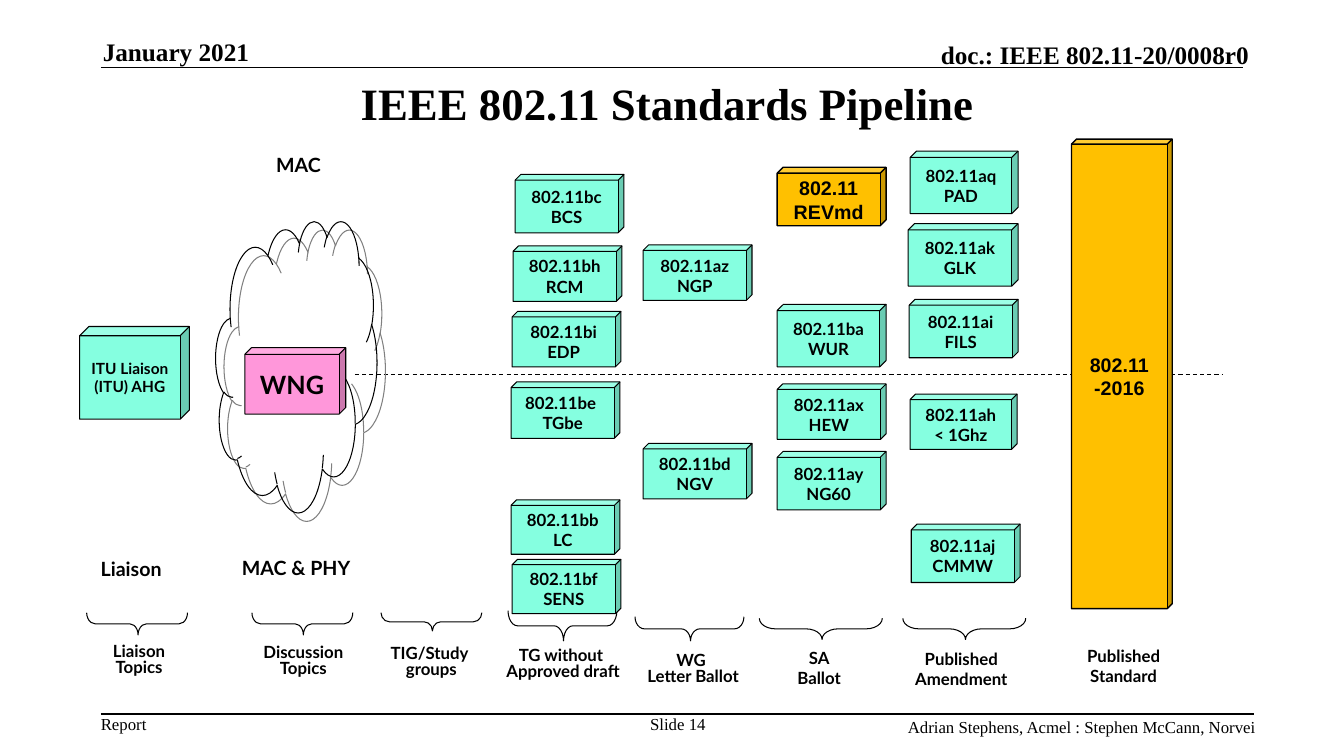
from dataclasses import dataclass
from lxml.etree import SubElement
from pptx import Presentation
from pptx.dml.color import RGBColor as RGB
from pptx.enum.dml import MSO_LINE
from pptx.enum.shapes import MSO_CONNECTOR as LINK, MSO_SHAPE as SHAPE
from pptx.enum.text import MSO_ANCHOR as ANCHOR, PP_ALIGN as ALIGN
from pptx.oxml.ns import qn
from pptx.util import Inches, Pt


@dataclass(frozen=True)
class Theme:
    ink: RGB = RGB(0, 0, 0)
    mint: RGB = RGB(0x85, 0xFF, 0xE0)
    pink: RGB = RGB(0xFF, 0x97, 0xDA)
    amber: RGB = RGB(0xFF, 0xC0, 0x00)
    shade: str = "808080"
    serif: str = "Times New Roman"
    sans: str = "Lato"
    standard: str = "Arial"
    title: int = 32
    header: int = 18
    label: int = 14
    body: int = 12
    small: int = 11


T = Theme()
WIDTH, HEIGHT = Inches(13.33), Inches(7.5)
CELL = WIDTH / 40  # square grid: 40 columns, 22.5 rows

# Left column of each stage, then its cubes: nudge, top, width, height, text
STAGES = [
    (15.24, [(0.09, 5.19, 3.24, 1.74, "802.11bc\nBCS"),
             (0.03, 7.32, 3.24, 1.65, "802.11bh\nRCM"),
             (0, 9.27, 3.24, 1.65, "802.11bi\nEDP"),
             (-0.03, 11.37, 3.24, 1.68, "802.11be \nTGbe"),
             (-0.03, 14.88, 3.24, 1.62, "802.11bb\nLC"),
             (0, 16.65, 3.24, 1.62, "802.11bf\nSENS")]),
    (19.14, [(0, 7.29, 3.24, 1.65, "802.11az\nNGP"),
             (0, 13.2, 3.24, 1.65, "802.11bd\nNGV")]),
    (23.13, [(0, 9.06, 3.24, 1.86, "802.11ba\nWUR"),
             (0, 11.43, 3.24, 1.65, "802.11ax\nHEW"),
             (0, 13.44, 3.24, 1.74, "802.11ay\nNG60")]),
    (27.09, [(0, 4.5, 3.21, 1.86, "802.11aq\nPAD"),
             (-0.06, 6.66, 3.27, 1.86, "802.11ak\nGLK"),
             (-0.03, 8.91, 3.24, 1.74, "802.11ai\nFILS"),
             (0, 11.73, 3.18, 1.65, "802.11ah\n< 1Ghz"),
             (0.03, 15.6, 3.24, 1.74, "802.11aj\nCMMW")]),
]

# Caption: centre, top, line spacing, text
CAPTIONS = [
    (4.14, 19.05, 0.8, "Liaison\nTopics"),
    (9.03, 19.08, 0.8, "Discussion\nTopics"),
    (12.84, 19.11, 0.8, "TIG/Study \ngroups"),
    (16.76, 19.17, 0.8, "TG without \nApproved draft"),
    (20.63, 19.32, 0.8, "WG \nLetter Ballot"),
    (24.38, 19.14, 1, "SA\nBallot"),
    (28.61, 19.17, 1, "Published\nAmendment"),
    (33.44, 19.08, 1, "Published\nStandard"),
]

# Brace: centre column, centre row, span, depth, bend radius
BRACES = [
    (4.08, 18.57, 3, 0.66, 0.25),
    (9, 18.57, 3, 0.66, 0.25),
    (12.84, 18.51, 3, 0.54, 0.25),
    (16.74, 18.63, 3.24, 0.9, 0.28),
    (20.52, 18.72, 3.24, 0.72, 0.28),
    (24.43, 18.72, 3.66, 0.63, 0.48),
    (28.7, 18.72, 3.66, 0.63, 0.48),
]


def cells(*counts):
    return [round(n * CELL) for n in counts]


def write(tf, text, font, size, bold=True, align=ALIGN.CENTER, spacing=None):
    tf.text = text
    for p in tf.paragraphs:
        p.alignment = align
        p.line_spacing = spacing
        for r in p.runs:
            r.font.name, r.font.size, r.font.bold = font, Pt(size), bold
            r.font.color.rgb = T.ink


def add_text(s, x, y, w, h, text, font, size, inset=0.0, anchor=ANCHOR.TOP, **style):
    tf = s.shapes.add_textbox(*cells(x, y, w, h)).text_frame
    tf.word_wrap, tf.vertical_anchor = True, anchor
    tf.margin_left = tf.margin_right = Inches(inset)
    tf.margin_top = tf.margin_bottom = Inches(inset / 2)
    write(tf, text, font, size, **style)


def add_outline(s, kind, x, y, w, h, weight=0.75):
    sp = s.shapes.add_shape(kind, *cells(x, y, w, h))
    sp.shadow.inherit = False
    sp.fill.background()
    sp.line.color.rgb, sp.line.width = T.ink, Pt(weight)
    return sp


def add_cube(s, x, y, w, h, text, fill=T.mint, font=T.sans, size=T.body,
             depth=0.1, weight=0.75):
    sp = add_outline(s, SHAPE.CUBE, x, y, w, h, weight)
    sp.adjustments[0] = depth
    sp.fill.solid()
    sp.fill.fore_color.rgb = fill
    tf = sp.text_frame
    tf.word_wrap, tf.vertical_anchor = False, ANCHOR.MIDDLE
    write(tf, text, font, size)


def add_brace(s, cx, cy, span, depth, bend):
    sp = add_outline(s, SHAPE.LEFT_BRACE, cx - depth / 2, cy - span / 2, depth, span)
    sp.rotation = 270
    sp.adjustments[0], sp.adjustments[1] = bend / depth, 0.51


def add_cloud(s, x, y, w, h):
    sp = add_outline(s, SHAPE.CLOUD, x, y, w, h)
    effects = sp._element.spPr.find(qn("a:effectLst"))
    shadow = SubElement(effects, qn("a:outerShdw"), dist=str(Pt(8.5)),
                        dir="2700000", algn="ctr", rotWithShape="0")
    SubElement(shadow, qn("a:srgbClr"), val=T.shade)


def add_rule(s, x1, x2, y, weight=1.0, dash=None):
    line = s.shapes.add_connector(LINK.STRAIGHT, *cells(x1, y, x2, y))
    SubElement(line._element.spPr, qn("a:effectLst"))
    line.line.color.rgb, line.line.width = T.ink, Pt(weight)
    if dash:
        line.line.dash_style = dash


def add_title(s, text):
    title = s.shapes.title
    title.left, title.top, title.width, title.height = cells(7.11, 1.98, 25.5, 2.13)
    title.text_frame.vertical_anchor = ANCHOR.MIDDLE
    write(title.text_frame, text, T.serif, T.title)


def add_page_frame(s):
    add_rule(s, 3, 37, 2.01)
    add_rule(s, 3, 37.32, 21.25)
    add_text(s, 3.06, 1.08, 8.19, 0.9, "January 2021", T.serif, T.header,
             anchor=ANCHOR.BOTTOM, align=ALIGN.LEFT)
    add_text(s, 21.87, 1.17, 15.3, 0.9, "doc.: IEEE 802.11-20/0008r0", T.serif,
             T.header, anchor=ANCHOR.BOTTOM, align=ALIGN.RIGHT)
    for x, y, w, text, align in [
            (3, 21.24, 3, "Report", ALIGN.LEFT),
            (19.02, 21.24, 2.31, "Slide 14", ALIGN.CENTER),
            (25.38, 21.33, 12, "Adrian Stephens, Acmel : Stephen McCann, Norvei",
             ALIGN.RIGHT)]:
        add_text(s, x, y, w, 0.8, text, T.serif, T.body, bold=False, align=align)


def main():
    prs = Presentation()
    prs.slide_width, prs.slide_height = WIDTH, HEIGHT
    s = prs.slides.add_slide(prs.slide_layouts[5])
    add_title(s, "IEEE 802.11 Standards Pipeline")
    add_page_frame(s)

    # Stage names and braces along the bottom
    for brace in BRACES:
        add_brace(s, *brace)
    for cx, y, spacing, text in CAPTIONS:
        add_text(s, cx - 2.25, y, 4.5, 1.3, text, T.sans, T.body,
                 inset=0.1, spacing=spacing)

    # Layer labels and the MAC / PHY divider
    for x, y, text in [(7.92, 4.41, "MAC"), (6.9, 16.41, "MAC & PHY"),
                       (2.7, 16.44, "Liaison")]:
        add_text(s, x, y, 4.2, 1.02, text, T.sans, T.label,
                 inset=0.1, align=ALIGN.LEFT)
    add_rule(s, 10.56, 36.39, 11.16, 0.75, MSO_LINE.DASH)

    # Liaison and discussion
    add_cloud(s, 6.42, 6.57, 4.8, 8.67)
    add_cube(s, 7.29, 10.35, 3, 1.98, "WNG", T.pink, size=T.header)
    add_cube(s, 2.37, 9.72, 3.27, 2.76, "ITU Liaison\n(ITU) AHG", size=T.small)

    # Amendments by stage
    for left, cubes in STAGES:
        for nudge, *box in cubes:
            add_cube(s, left + nudge, *box)

    # Base standard and its revision
    add_cube(s, 23.13, 4.98, 3.24, 1.74, "802.11\nREVmd", T.amber,
             T.standard, T.label, weight=1)
    add_cube(s, 31.89, 4.14, 3, 13.98, "802.11\n-2016", T.amber,
             T.standard, T.label, depth=0.05, weight=1)

    prs.save("out.pptx")


if __name__ == "__main__":
    main()
